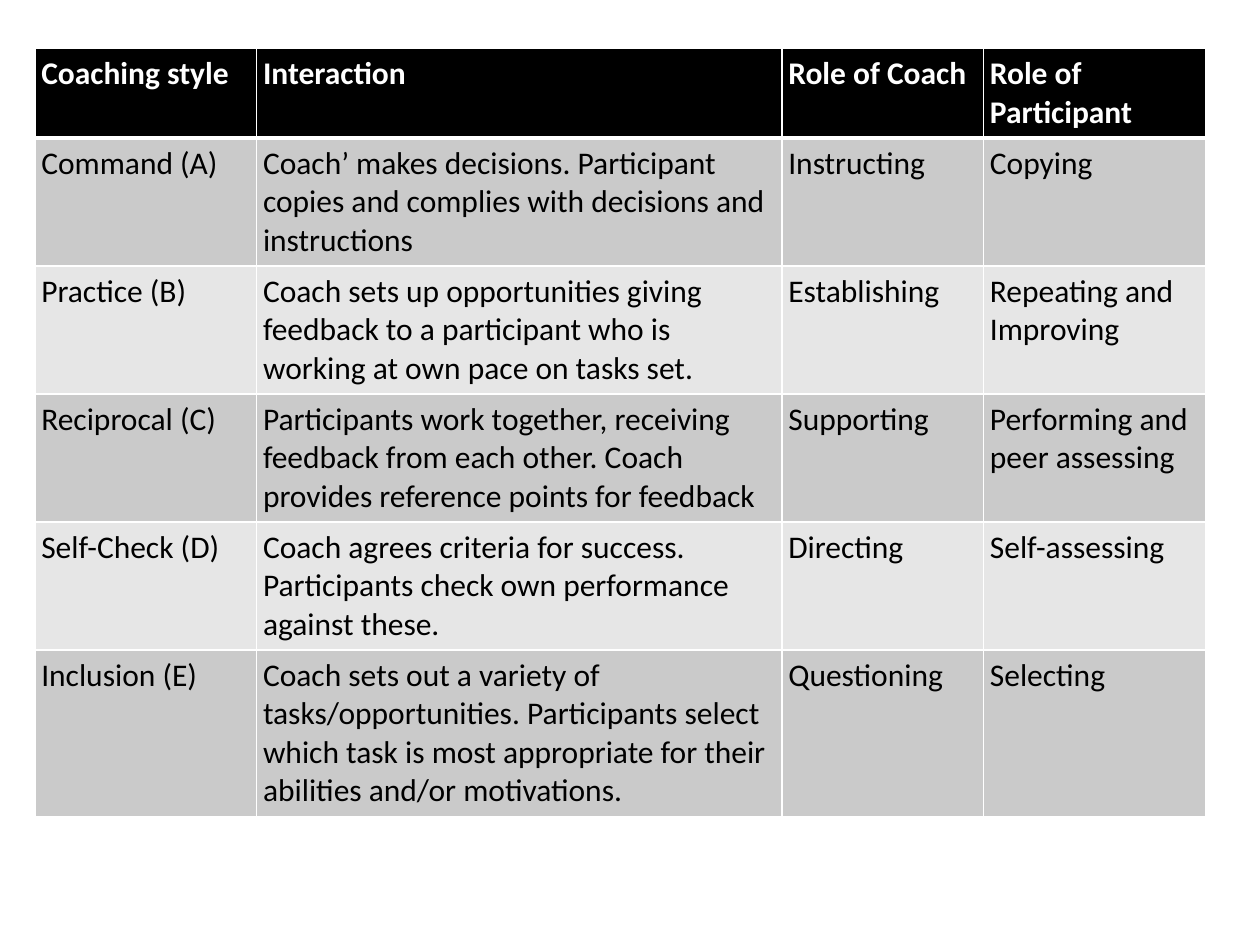
from lxml.etree import SubElement
from pptx import Presentation
from pptx.dml.color import RGBColor
from pptx.oxml.ns import qn
from pptx.util import Pt

COLORS = {
    "header": "000000",
    "header_text": "FFFFFF",
    "text": "000000",
    "odd_row": "CACACA",
    "even_row": "E6E6E6",
    "border": "FFFFFF",
}
FONT = "Calibri"
INSET = 3.6
COLUMN_WIDTHS = [126.7, 300.2, 115.2, 126.7]
ROW_HEIGHTS = [50.3, 73.1, 73.1, 73.1, 73.1, 95]
STYLES = [
    ("Coaching style", "Interaction", "Role of Coach", "Role of Participant"),
    ("Command (A)",
     "Coach’ makes decisions. Participant copies and complies with decisions and instructions",
     "Instructing", "Copying"),
    ("Practice (B)",
     "Coach sets up opportunities giving feedback to a participant who is working at own pace on tasks set.",
     "Establishing", "Repeating and Improving"),
    ("Reciprocal (C)",
     "Participants work together, receiving feedback from each other. Coach provides reference points for feedback",
     "Supporting", "Performing and peer assessing"),
    ("Self-Check (D)",
     "Coach agrees criteria for success. Participants check own performance against these.",
     "Directing", "Self-assessing"),
    ("Inclusion (E)",
     "Coach sets out a variety of tasks/opportunities. Participants select which task is most "
     "appropriate for their abilities and/or motivations.",
     "Questioning", "Selecting"),
]


def color(name):
    return RGBColor.from_string(COLORS[name])


def set_borders(cell, top, bottom):
    """Draw the four cell borders; the widths above and below are in points."""
    properties = cell._tc.get_or_add_tcPr()
    for side, width in (("L", 1), ("R", 1), ("T", top), ("B", bottom)):
        line = SubElement(properties, qn(f"a:ln{side}"), w=str(Pt(width)))
        fill = SubElement(line, qn("a:solidFill"))
        SubElement(fill, qn("a:srgbClr"), val=COLORS["border"])


def fill_cell(cell, text, row):
    is_header = row == 0
    set_borders(cell, top=3 if row == 1 else 1, bottom=3 if is_header else 1)
    cell.fill.solid()
    band = "header" if is_header else "odd_row" if row % 2 else "even_row"
    cell.fill.fore_color.rgb = color(band)
    cell.margin_left = cell.margin_right = Pt(INSET)
    cell.margin_top = cell.margin_bottom = Pt(INSET)
    span = cell.text_frame.paragraphs[0].add_run()
    span.text = text
    span.font.name = FONT
    span.font.size = Pt(18)
    span.font.bold = is_header
    span.font.color.rgb = color("header_text" if is_header else "text")


def add_style_table(page, left, top):
    frame = page.shapes.add_table(
        len(STYLES), len(COLUMN_WIDTHS), Pt(left), Pt(top),
        Pt(sum(COLUMN_WIDTHS)), Pt(sum(ROW_HEIGHTS)))
    table = frame.table
    for column, width in zip(table.columns, COLUMN_WIDTHS):
        column.width = Pt(width)
    for row, (texts, height) in enumerate(zip(STYLES, ROW_HEIGHTS)):
        table.rows[row].height = Pt(height)
        for column, text in enumerate(texts):
            fill_cell(table.cell(row, column), text, row)


def main():
    deck = Presentation()
    deck.slide_width, deck.slide_height = Pt(720), Pt(540)
    page = deck.slides.add_slide(deck.slide_layouts[6])
    add_style_table(page, left=20, top=27.7)
    deck.save("out.pptx")


if __name__ == "__main__":
    main()
